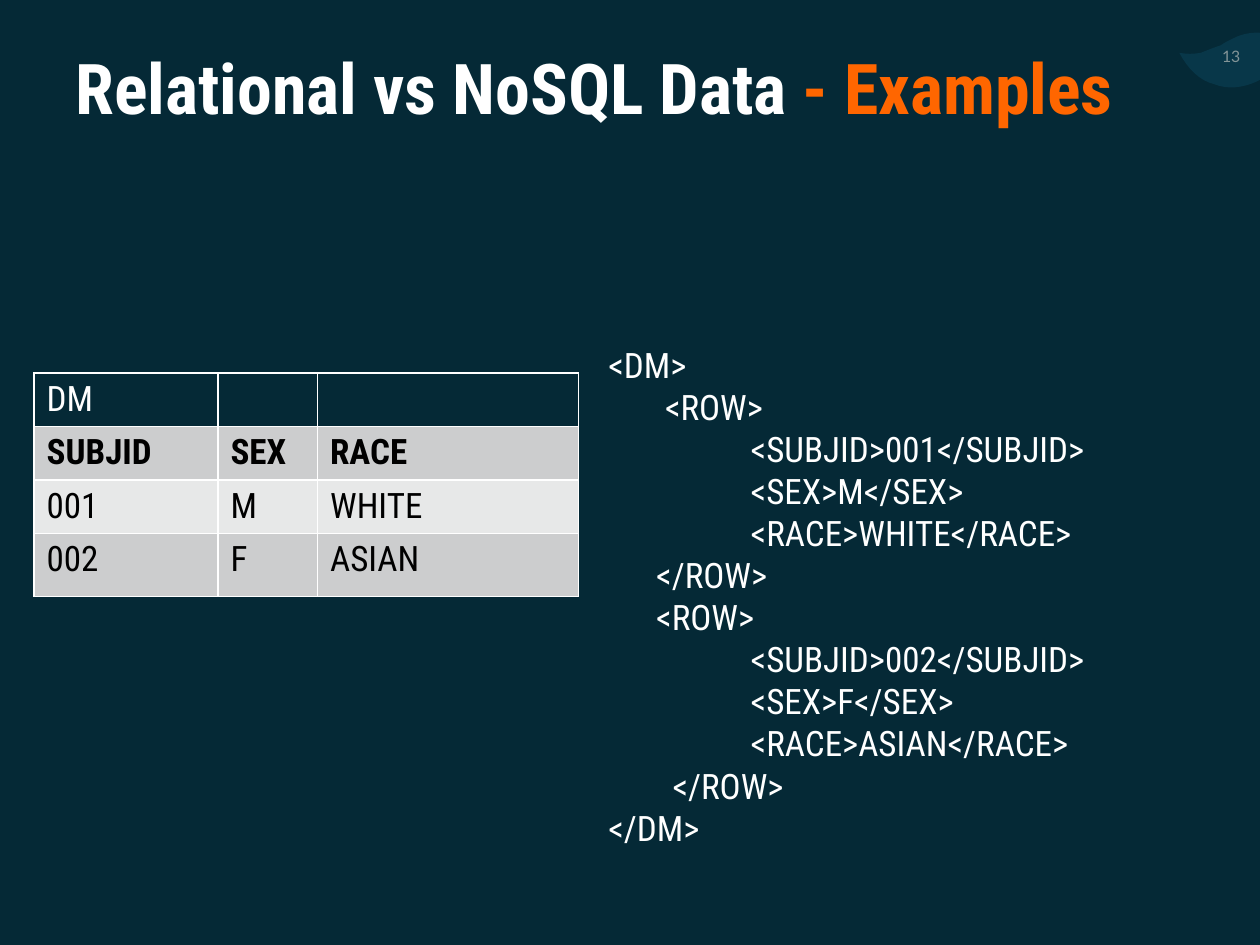
from lxml import etree
from pptx import Presentation
from pptx.dml.color import RGBColor
from pptx.enum.text import MSO_ANCHOR, MSO_AUTO_SIZE, PP_ALIGN
from pptx.oxml.ns import qn
from pptx.util import Inches, Pt

MIDDLE, TOP = MSO_ANCHOR.MIDDLE, MSO_ANCHOR.TOP
LEFT = PP_ALIGN.LEFT
NO_AUTOFIT = MSO_AUTO_SIZE.NONE
TITLE_ONLY_LAYOUT = 5

FONT = "Roboto Condensed"
COLOURS = {
    "background": "052936", "wave": "083749", "accent": "FF6600",
    "white": "FFFFFF", "black": "000000", "page_number": "829497",
    "band_dark": "CCCDCE", "band_light": "E7E8E8",
}

# Wave outline: a start point, then (control, control, end) for each curve.
WAVE_START = (10.36, 0.55)
WAVE_CURVES = [
    ((10.33, 0.48), (10.28, 0.42), (10.23, 0.37)),
    ((10.18, 0.32), (10.12, 0.28), (10.05, 0.27)),
    ((9.98, 0.25), (9.90, 0.26), (9.82, 0.29)),
    ((9.78, 0.31), (9.73, 0.33), (9.69, 0.36)),
    ((9.63, 0.38), (9.58, 0.40), (9.53, 0.42)),
    ((9.47, 0.43), (9.42, 0.43), (9.36, 0.42)),
    ((9.43, 0.55), (9.52, 0.64), (9.64, 0.67)),
    ((9.74, 0.71), (9.86, 0.70), (9.97, 0.65)),
    ((10.03, 0.62), (10.08, 0.58), (10.14, 0.56)),
    ((10.22, 0.53), (10.28, 0.53), (10.36, 0.55)),
]

TABLE_ROWS = [
    ("DM", "", ""),
    ("SUBJID", "SEX", "RACE"),
    ("001", "M", "WHITE"),
    ("002", "F", "ASIAN"),
]
ROW_FILLS = ["background", "band_dark", "band_light", "band_dark"]
COLUMN_WIDTHS = [1.46, 0.79, 2.07]
ROW_HEIGHTS = [0.41, 0.41, 0.41, 0.5]

# Each line of the XML listing with its indent in inches.
FIELD_INDENT = 1.13
XML_LINES = [
    (0, "<DM>"),
    (0.45, "<ROW>"),
    (FIELD_INDENT, "<SUBJID>001</SUBJID>"),
    (FIELD_INDENT, "<SEX>M</SEX>"),
    (FIELD_INDENT, "<RACE>WHITE</RACE>"),
    (0.38, "</ROW>"),
    (0.38, "<ROW>"),
    (FIELD_INDENT, "<SUBJID>002</SUBJID>"),
    (FIELD_INDENT, "<SEX>F</SEX>"),
    (FIELD_INDENT, "<RACE>ASIAN</RACE>"),
    (0.51, "</ROW>"),
    (0, "</DM>"),
]


def colour(name):
    return RGBColor.from_string(COLOURS[name])


def format_font(font, size, colour_name, bold=False, name=FONT):
    font.name, font.size, font.bold = name, Pt(size), bold
    font.color.rgb = colour(colour_name)


def inches(box):
    return [Inches(length) for length in box]


def curve_points(start, curves, steps=8):
    """Sample a chain of cubic Bezier curves."""
    points = []
    for first, second, end in curves:
        for step in range(1, steps + 1):
            t = step / steps
            u = 1 - t
            points.append(tuple(
                u**3 * a + 3 * u * u * t * b + 3 * u * t * t * c + t**3 * d
                for a, b, c, d in zip(start, first, second, end)))
        start = end
    return points


def add_page_mark(slide, box, number):
    # The builder rounds to whole units, so its points are given in EMU.
    builder = slide.shapes.build_freeform(*inches(WAVE_START))
    points = [inches(point) for point in curve_points(WAVE_START, WAVE_CURVES)]
    builder.add_line_segments(points, close=True)
    wave = builder.convert_to_shape()
    wave.shadow.inherit = False
    wave.fill.solid()
    wave.fill.fore_color.rgb = colour("wave")
    wave.line.fill.background()

    text_frame = slide.shapes.add_textbox(*inches(box)).text_frame
    text_frame.word_wrap = False
    text_frame.margin_right = 0
    text_frame.vertical_anchor = MIDDLE
    text_frame.text = number
    text_frame.paragraphs[0].alignment = LEFT
    format_font(text_frame.paragraphs[0].runs[0].font, 9, "page_number", name="Lato")


def add_title(slide, box, parts):
    title = slide.shapes.title
    title.left, title.top, title.width, title.height = inches(box)
    text_frame = title.text_frame
    text_frame.auto_size = NO_AUTOFIT
    text_frame.word_wrap = True
    text_frame.vertical_anchor = TOP
    paragraph = text_frame.paragraphs[0]
    paragraph.alignment = LEFT
    paragraph.line_spacing = 0.9
    for text, colour_name in parts:
        run = paragraph.add_run()
        run.text = text
        format_font(run.font, 40, colour_name, bold=True)


def add_borders(cell):
    properties = cell._tc.get_or_add_tcPr()
    for side in ("a:lnL", "a:lnR", "a:lnT", "a:lnB"):
        line = etree.SubElement(properties, qn(side), w=str(Pt(1)))
        fill = etree.SubElement(line, qn("a:solidFill"))
        etree.SubElement(fill, qn("a:srgbClr"), val=COLOURS["white"])


def add_data_table(slide, box):
    table = slide.shapes.add_table(
        len(TABLE_ROWS), len(COLUMN_WIDTHS), *inches(box)).table
    for column, width in zip(table.columns, COLUMN_WIDTHS):
        column.width = Inches(width)
    for index, (row, height) in enumerate(zip(table.rows, ROW_HEIGHTS)):
        row.height = Inches(height)
        for cell, text in zip(row.cells, TABLE_ROWS[index]):
            add_borders(cell)
            cell.margin_top = cell.margin_bottom = Pt(3.3)
            cell.fill.solid()
            cell.fill.fore_color.rgb = colour(ROW_FILLS[index])
            cell.text = text
            for run in cell.text_frame.paragraphs[0].runs:
                format_font(run.font, 20, "black" if index else "white",
                            bold=index == 1)


def add_xml_listing(slide, box):
    text_frame = slide.shapes.add_textbox(*inches(box)).text_frame
    text_frame.word_wrap = True
    text_frame.text = "\n".join(text for _, text in XML_LINES)
    for paragraph, (indent, _) in zip(text_frame.paragraphs, XML_LINES):
        paragraph._p.get_or_add_pPr().set("marL", str(Inches(indent)))
        format_font(paragraph.runs[0].font, 20, "white")


def main():
    presentation = Presentation()
    presentation.slide_width, presentation.slide_height = inches((10, 7.5))
    slide = presentation.slides.add_slide(
        presentation.slide_layouts[TITLE_ONLY_LAYOUT])
    slide.background.fill.solid()
    slide.background.fill.fore_color.rgb = colour("background")

    add_page_mark(slide, (9.6, 0.27, 0.31, 0.36), "13")
    add_title(slide, (0.5, 0.38, 9, 1.25),
              [("Relational vs NoSQL Data ", "white"), ("- Examples", "accent")])
    add_data_table(slide, (0.27, 2.96, sum(COLUMN_WIDTHS), sum(ROW_HEIGHTS)))
    add_xml_listing(slide, (4.73, 2.68, 4.97, 4.14))
    presentation.save("out.pptx")


if __name__ == "__main__":
    main()
